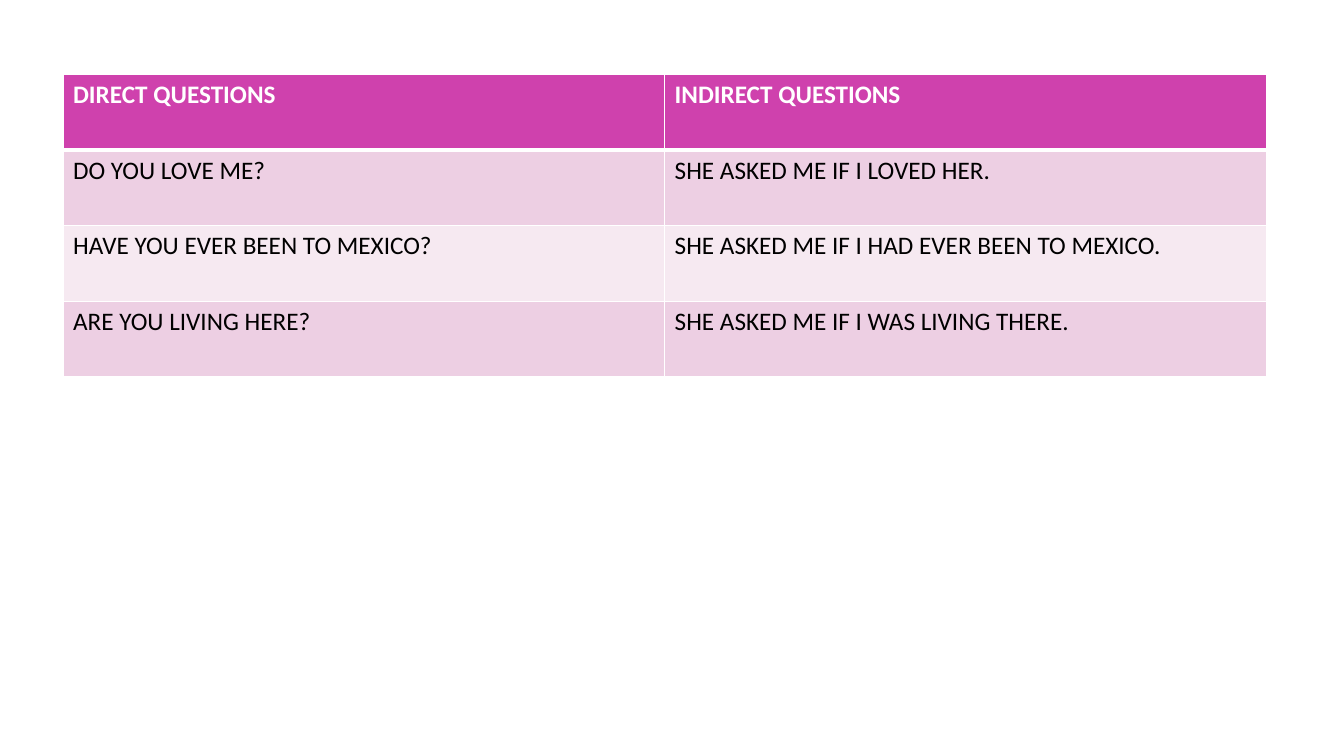
from lxml.etree import SubElement
from pptx import Presentation
from pptx.dml.color import RGBColor
from pptx.oxml.ns import qn
from pptx.util import Pt

PX = 9525  # EMU in one px
SLIDE_WIDTH, SLIDE_HEIGHT = 1280, 720
LEFT, TOP = 60, 71
COLUMN_WIDTH, ROW_HEIGHT = 573, 72

WHITE = RGBColor(0xFF, 0xFF, 0xFF)
BLACK = RGBColor(0x00, 0x00, 0x00)
MAGENTA = RGBColor(0xCF, 0x41, 0xAD)
PINK = RGBColor(0xED, 0xCF, 0xE3)
PALE_PINK = RGBColor(0xF6, 0xE9, 0xF1)

QUESTIONS = [
    ("DIRECT QUESTIONS", "INDIRECT QUESTIONS"),
    ("DO YOU LOVE ME?", "SHE ASKED ME IF I LOVED HER."),
    ("HAVE YOU EVER BEEN TO MEXICO?", "SHE ASKED ME IF I HAD EVER BEEN TO MEXICO."),
    ("ARE YOU LIVING HERE?", "SHE ASKED ME IF I WAS LIVING THERE."),
]


def add_borders(cell, top, bottom):
    """Draw white borders, with the top and bottom widths in points."""
    properties = cell._tc.get_or_add_tcPr()
    for side, width in (("L", 1), ("R", 1), ("T", top), ("B", bottom)):
        line = SubElement(properties, qn(f"a:ln{side}"), w=str(Pt(width)))
        fill = SubElement(line, qn("a:solidFill"))
        SubElement(fill, qn("a:srgbClr"), val=str(WHITE))


def style_cell(cell, text, row):
    is_header = row == 0
    # Borders come before the fill in the cell properties
    add_borders(cell, top=3 if row == 1 else 1, bottom=3 if is_header else 1)
    cell.fill.solid()
    cell.fill.fore_color.rgb = MAGENTA if is_header else PINK if row % 2 else PALE_PINK

    cell.text = text
    font = cell.text_frame.paragraphs[0].font
    font.name = "Calibri"
    font.size = Pt(18)
    font.bold = is_header
    font.color.rgb = WHITE if is_header else BLACK


def add_question_table(slide, rows):
    row_count, column_count = len(rows), len(rows[0])
    table = slide.shapes.add_table(
        row_count, column_count, LEFT * PX, TOP * PX,
        column_count * COLUMN_WIDTH * PX, row_count * ROW_HEIGHT * PX,
    ).table
    for row, texts in enumerate(rows):
        for column, text in enumerate(texts):
            style_cell(table.cell(row, column), text, row)


def main():
    presentation = Presentation()
    presentation.slide_width = SLIDE_WIDTH * PX
    presentation.slide_height = SLIDE_HEIGHT * PX
    slide = presentation.slides.add_slide(presentation.slide_layouts[6])

    # Direct questions beside their reported form
    add_question_table(slide, QUESTIONS)

    presentation.save("out.pptx")


if __name__ == "__main__":
    main()
